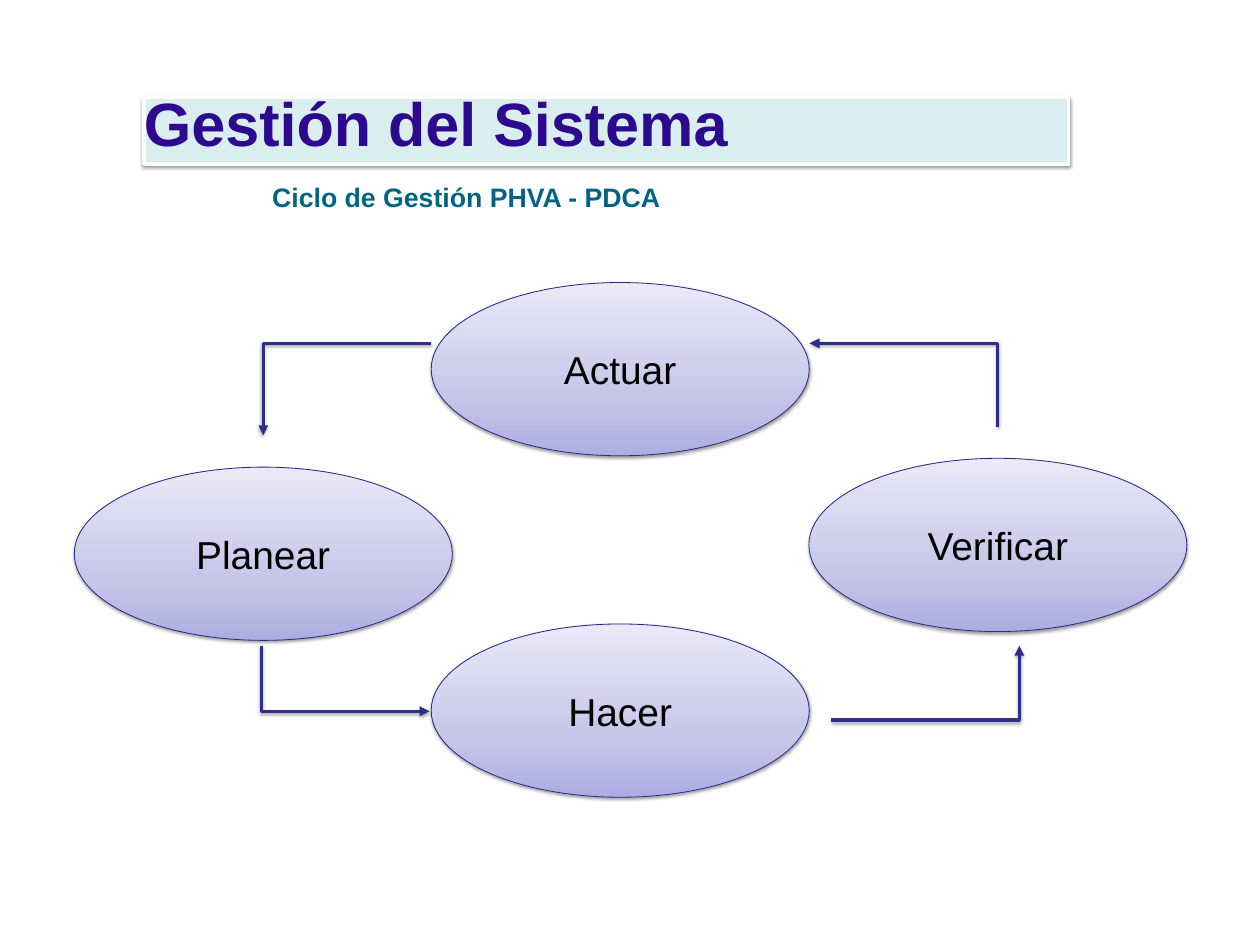
from copy import deepcopy

from lxml.etree import SubElement
from pptx import Presentation
from pptx.dml.color import RGBColor
from pptx.enum.shapes import MSO_CONNECTOR, MSO_SHAPE
from pptx.enum.text import MSO_ANCHOR, MSO_AUTO_SIZE, PP_ALIGN
from pptx.oxml.ns import qn
from pptx.util import Cm, Pt

BLACK = RGBColor(0x00, 0x00, 0x00)
WHITE = RGBColor(0xFF, 0xFF, 0xFF)
TITLE_INK = RGBColor(0x2C, 0x09, 0x8F)
TITLE_BAND = RGBColor(0xDA, 0xED, 0xEF)
SUBTITLE_INK = RGBColor(0x00, 0x64, 0x82)
STAGE_EDGE = RGBColor(0x2A, 0x2A, 0x89)
ARROW_INK = RGBColor(0x2D, 0x2D, 0x8A)
STAGE_SHADES = (
    (0, RGBColor(0xAD, 0xAD, 0xE1)),
    (0.35, RGBColor(0xC6, 0xC6, 0xE9)),
    (1, RGBColor(0xE9, 0xE9, 0xF7)),
)

STAGE_WIDTH, STAGE_HEIGHT = 12, 5.5

# Stage name, left and top in cm
STAGES = (
    ("Planear", 2.36, 14.83),
    ("Verificar", 25.68, 14.55),
    ("Actuar", 13.69, 8.97),
    ("Hacer", 13.69, 19.81),
)

# Start and end in cm, and whether the first leg is vertical
ARROWS = (
    ((26.39, 22.86), (32.36, 20.5), False),
    ((31.67, 13.54), (25.7, 10.9), True),
    ((13.69, 10.9), (8.36, 13.82), False),
    ((8.31, 20.5), (13.64, 22.58), True),
)


def write_text(shape, text, *, size, color, bold=False, align=PP_ALIGN.CENTER,
               anchor=MSO_ANCHOR.TOP, margins=(0, 0.18, 0.36, 0.18),
               line_spacing=None, wrap=False):
    frame = shape.text_frame
    frame.auto_size = MSO_AUTO_SIZE.NONE
    frame.word_wrap = wrap
    frame.vertical_anchor = anchor
    (frame.margin_left, frame.margin_top,
     frame.margin_right, frame.margin_bottom) = map(Cm, margins)
    paragraph = frame.paragraphs[0]
    paragraph.alignment = align
    if line_spacing:
        paragraph.line_spacing = Pt(line_spacing)
    run = paragraph.add_run()
    run.text = text
    run.font.name = "Arial"
    run.font.size = Pt(size)
    run.font.bold = bold
    run.font.color.rgb = color


def add_shadow(effects, opacity, distance):
    shadow = SubElement(effects, qn("a:outerShdw"), blurRad=str(Pt(3.1)),
                        dist=str(Pt(distance)), dir="5400000", rotWithShape="0")
    tint = SubElement(shadow, qn("a:srgbClr"), val=str(BLACK))
    SubElement(tint, qn("a:alpha"), val=str(opacity * 1000))


def shade_shape(shape):
    shape.shadow.inherit = False
    effects = shape._element.spPr.find(qn("a:effectLst"))
    add_shadow(effects, opacity=38, distance=1.6)


def fill_stage(fill):
    fill.gradient()
    fill.gradient_angle = 90
    first_stop = fill.gradient_stops[0]._gs
    first_stop.addnext(deepcopy(first_stop))
    for stop, (position, color) in zip(fill.gradient_stops, STAGE_SHADES):
        stop.position = position
        stop.color.rgb = color


def add_stage(slide, name, left, top):
    stage = slide.shapes.add_shape(MSO_SHAPE.OVAL, Cm(left), Cm(top),
                                   Cm(STAGE_WIDTH), Cm(STAGE_HEIGHT))
    fill_stage(stage.fill)
    stage.line.color.rgb = STAGE_EDGE
    stage.line.width = Pt(0.75)
    shade_shape(stage)
    write_text(stage, name, size=35, color=BLACK, anchor=MSO_ANCHOR.MIDDLE,
               margins=(0.38, 0.18, 0.38, 0.18))


def turn_vertical_first(arrow, going_up):
    """Rotate the frame about its centre so the first leg runs vertically."""
    width, height = arrow.width, arrow.height
    arrow.left += (width - height) // 2
    arrow.top += (height - width) // 2
    arrow.width, arrow.height = height, width
    frame = arrow._element.spPr.find(qn("a:xfrm"))
    frame.set("rot", str((90 if going_up else 270) * 60000))
    frame.set("flipH", "1")
    frame.set("flipV", "0")


def add_arrow(slide, start, end, vertical_first):
    arrow = slide.shapes.add_connector(MSO_CONNECTOR.ELBOW,
                                       *map(Cm, start + end))
    properties = arrow._element.spPr
    properties.find(qn("a:prstGeom")).set("prst", "bentConnector2")
    if vertical_first:
        turn_vertical_first(arrow, going_up=end[1] < start[1])
    arrow.line.color.rgb = ARROW_INK
    arrow.line.width = Pt(3)
    SubElement(properties.find(qn("a:ln")), qn("a:tailEnd"), type="triangle")
    add_shadow(SubElement(properties, qn("a:effectLst")), opacity=35, distance=1.8)


def add_title(slide):
    title = slide.shapes.title
    title.left, title.top = Cm(4.57), Cm(3.1)
    title.width, title.height = Cm(29.36), Cm(2.11)
    title.fill.solid()
    title.fill.fore_color.rgb = TITLE_BAND
    title.line.color.rgb = WHITE
    title.line.width = Pt(3)
    shade_shape(title)
    write_text(title, "Gestión del Sistema", size=55, color=TITLE_INK, bold=True,
               align=PP_ALIGN.JUSTIFY, line_spacing=49.4, wrap=True)


def add_subtitle(slide):
    subtitle = slide.shapes.add_textbox(Cm(8.64), Cm(5.23), Cm(13), Cm(1.7))
    write_text(subtitle, "Ciclo de Gestión PHVA - PDCA", size=24,
               color=SUBTITLE_INK, bold=True, align=PP_ALIGN.JUSTIFY,
               line_spacing=38.4, wrap=True)


def main():
    presentation = Presentation()
    presentation.slide_width, presentation.slide_height = Cm(40), Cm(30)
    slide = presentation.slides.add_slide(presentation.slide_layouts[5])

    # Heading
    add_title(slide)
    add_subtitle(slide)

    # Cycle stages and the arrows between them
    for stage in STAGES:
        add_stage(slide, *stage)
    for arrow in ARROWS:
        add_arrow(slide, *arrow)

    presentation.save("out.pptx")


if __name__ == "__main__":
    main()
